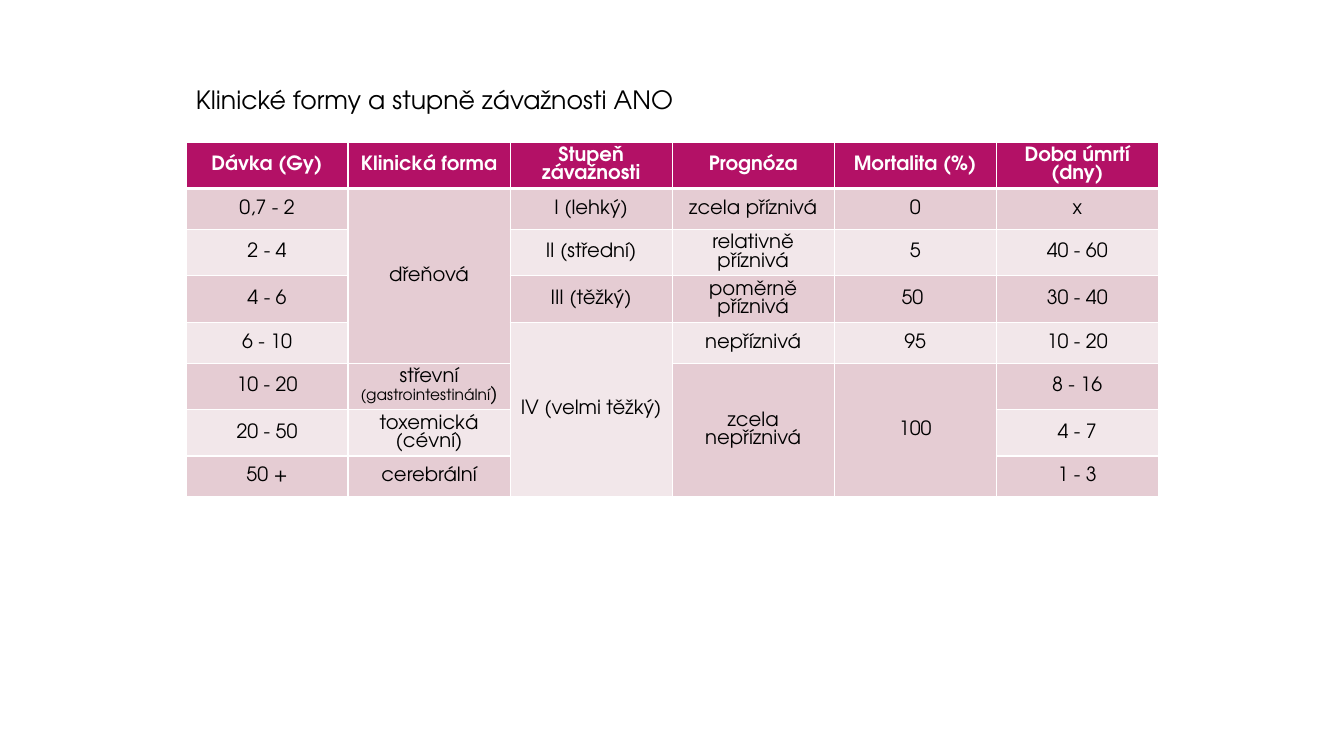
from lxml import etree
from pptx import Presentation
from pptx import util as u
from pptx.dml.color import RGBColor
from pptx.enum import text
from pptx.oxml import ns

MAGENTA = RGBColor(0xB3, 0x11, 0x66)
ROSE = RGBColor(0xE5, 0xCC, 0xD3)
PALE_ROSE = RGBColor(0xF2, 0xE7, 0xEA)
WHITE = RGBColor(0xFF, 0xFF, 0xFF)
BLACK = RGBColor(0, 0, 0)

HEADINGS = ["Dávka (Gy)", "Klinická forma", "Stupeň závažnosti", "Prognóza",
            "Mortalita (%)", "Doba úmrtí (dny)"]
INTESTINAL = [("střevní ", 14), ("(gastrointestinální", 11), (")", 14)]
SYNDROMES = [
    ["0,7 - 2", "dřeňová", "I (lehký)", "zcela příznivá", "0", "x"],
    ["2 - 4", None, "II (střední)", "relativně příznivá", "5", "40 - 60"],
    ["4 - 6", None, "III (těžký)", "poměrně příznivá", "50 ", "30 - 40"],
    ["6 - 10", None, "IV (velmi těžký)", "nepříznivá", "95", "10 - 20"],
    ["10 - 20", INTESTINAL, None, "zcela nepříznivá", "100", "8 - 16"],
    ["20 - 50", "toxemická (cévní)", None, None, None, "4 - 7"],
    ["50 +", "cerebrální", None, None, None, "1 - 3"],
]


class SlideBuilder:
    font = "TeX Gyre Adventor"

    def __init__(self, deck):
        self.page = deck.slides.add_slide(deck.slide_layouts[6])

    def px(self, count):
        return u.Emu(round(count * u.Inches(1) / 100.8))

    def add_words(self, para, content, size, color, bold=False):
        pieces = [(content, size)] if isinstance(content, str) else content
        for words, points in pieces:
            span = para.add_run()
            span.text = words
            values = {"name": self.font, "size": u.Pt(points), "bold": bold}
            for name, value in values.items():
                setattr(span.font, name, value)
            span.font.color.rgb = color

    def title(self, left, top, width, height, words):
        box = self.page.shapes.add_textbox(*map(self.px, (left, top, width, height)))
        values = {"word_wrap": False, "auto_size": text.MSO_AUTO_SIZE.SHAPE_TO_FIT_TEXT}
        for name, value in values.items():
            setattr(box.text_frame, name, value)
        self.add_words(box.text_frame.paragraphs[0], words, 18, BLACK)

    def borders(self, cell, widths):
        properties = cell._tc.get_or_add_tcPr()
        for side, points in widths.items():
            line = etree.SubElement(properties, ns.qn(f"a:ln{side}"), w=str(u.Pt(points)))
            fill = etree.SubElement(line, ns.qn("a:solidFill"))
            etree.SubElement(fill, ns.qn("a:srgbClr"), val=str(WHITE))

    def table(self, left, top, column_width, row_height, rows):
        count, columns = len(rows), len(rows[0])
        size = (left, top, column_width * columns, row_height * count)
        grid = self.page.shapes.add_table(count, columns, *map(self.px, size)).table
        for column in grid.columns:
            column.width = self.px(column_width)
        for row in grid.rows:
            row.height = self.px(row_height)
        for r, row in enumerate(rows):
            for c, content in enumerate(row):
                self.cell(grid.cell(r, c), r, content)
                last = r
                while content and last + 1 < count and rows[last + 1][c] is None:
                    last += 1
                if last > r:
                    grid.cell(r, c).merge(grid.cell(last, c))

    def cell(self, cell, row, content):
        header = row == 0
        self.borders(cell, {"L": 1, "R": 1, "T": 3 if row == 1 else 1, "B": 3 if header else 1})
        cell.fill.solid()
        cell.fill.fore_color.rgb = MAGENTA if header else ROSE if row % 2 else PALE_ROSE
        cell.vertical_anchor = text.MSO_ANCHOR.MIDDLE
        para = cell.text_frame.paragraphs[0]
        para.alignment = text.PP_ALIGN.CENTER
        if content:
            self.add_words(para, content, 14, WHITE if header else BLACK, header)


def main():
    deck = Presentation()
    deck.slide_width, deck.slide_height = u.Inches(13.33), u.Inches(7.5)
    builder = SlideBuilder(deck)
    builder.table(186, 142, 162, 41, [HEADINGS] + SYNDROMES)
    builder.title(186, 79, 504, 40, "Klinické formy a stupně závažnosti ANO")
    deck.save("out.pptx")


if __name__ == "__main__":
    main()
